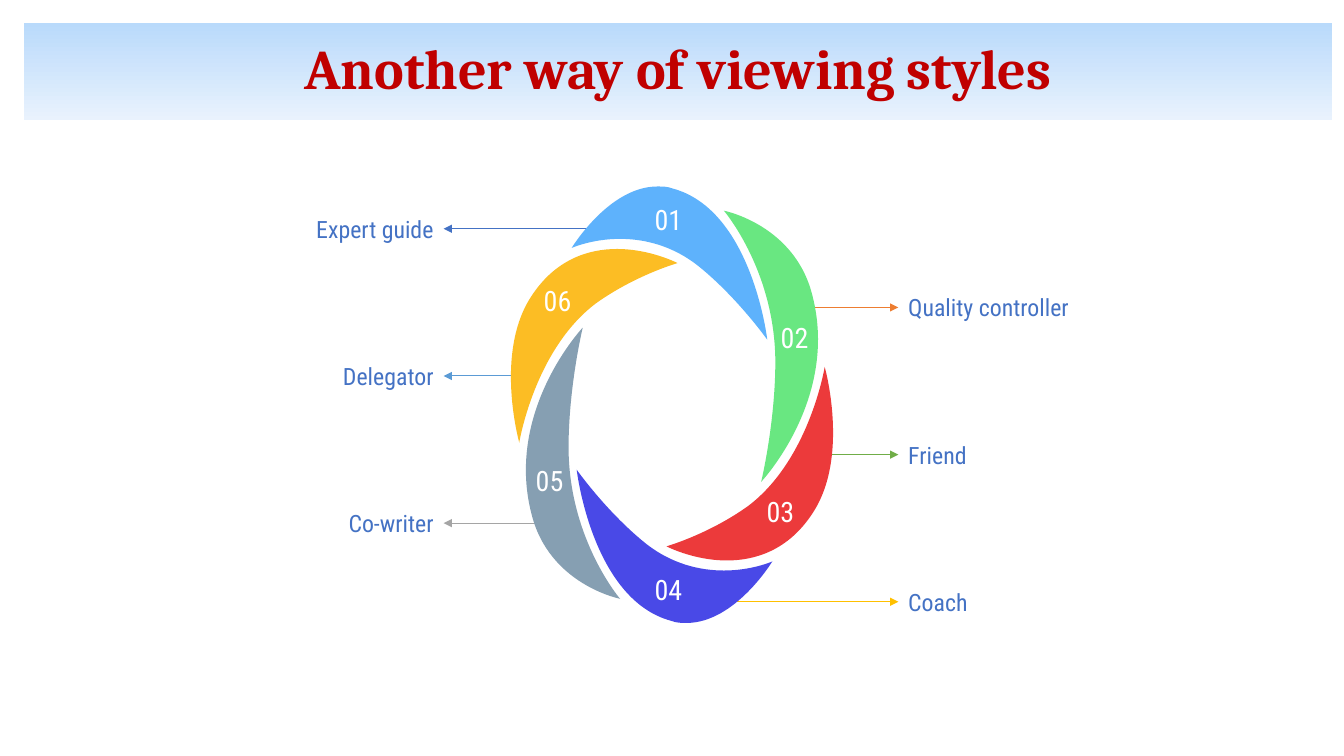
"""Build a slide with six leadership styles arranged as a ring of petals."""
import lxml.etree
import pptx
import pptx.dml.color
import pptx.enum.shapes
import pptx.enum.text
import pptx.oxml.ns
import pptx.util

CELL = pptx.util.Inches(1)
COLUMNS, ROWS = 13.33, 7.5
RING_SPAN = (13.33, 8.03)
LABEL_WIDTH, LABEL_HEIGHT = 1.96, 0.63
LABEL_LEFT = {"left": 2.44, "right": 8.91}
FIRST_ROW = {"left": 2.27, "right": 3.05}
ROW_STEP = 1.46

COLOURS = {
    "title": "C00000", "label": "4472C4", "number": "FFFFFF",
    "band top": "B9DAFB", "band bottom": "E9F2FD",
    "01": "5EB2FC", "02": "69E781", "03": "EC3A3B",
    "04": "4949E7", "05": "869FB2", "06": "FCBD24",
    "Expert guide": "4472C4", "Quality controller": "ED7D31",
    "Friend": "70AD47", "Coach": "FFC000",
    "Delegator": "5B9BD5", "Co-writer": "A5A5A5",
}

TOP_PETAL = [
    (6.52, 1.85), (6.04, 1.85), (5.67, 2.46), (5.67, 2.46),
    (5.67, 2.46), (5.87, 2.37), (6.15, 2.37),
    (6.38, 2.37), (6.67, 2.43), (6.94, 2.65),
    (7.32, 2.96), (7.61, 3.37), (7.61, 3.37),
    (7.61, 3.37), (7.46, 2.08), (6.67, 1.87),
    (6.62, 1.85), (6.57, 1.85), (6.52, 1.85),
]
UPPER_RIGHT_PETAL = [
    (7.18, 2.09), (7.18, 2.09), (7.71, 2.71), (7.69, 3.65),
    (7.68, 4.24), (7.55, 4.78), (7.55, 4.78),
    (7.55, 4.78), (8.32, 3.96), (8.06, 2.94),
    (7.89, 2.23), (7.18, 2.09), (7.18, 2.09),
]
LOWER_RIGHT_PETAL = [
    (8.18, 3.64), (8.18, 3.64), (8.03, 4.56), (7.42, 5.02),
    (7.03, 5.30), (6.61, 5.42), (6.61, 5.42),
    (6.61, 5.42), (6.88, 5.56), (7.21, 5.56),
    (7.49, 5.56), (7.82, 5.46), (8.06, 5.09),
    (8.43, 4.53), (8.18, 3.64), (8.18, 3.64),
]


def opposite(outline):
    """Turn an outline half way round the centre of the ring."""
    return [(RING_SPAN[0] - x, RING_SPAN[1] - y) for x, y in outline]


STYLES = [
    ("Expert guide", "left", 0, 5.85, "01", (6.63, 2.18), TOP_PETAL),
    ("Quality controller", "right", 0, 7.98, "02", (7.88, 3.35), UPPER_RIGHT_PETAL),
    ("Friend", "right", 1, 8.18, "03", (7.74, 5.07), LOWER_RIGHT_PETAL),
    ("Coach", "right", 2, 7.23, "04", (6.63, 5.85), opposite(TOP_PETAL)),
    ("Delegator", "left", 1, 5.13, "06", (5.53, 2.98), opposite(LOWER_RIGHT_PETAL)),
    ("Co-writer", "left", 2, 5.48, "05", (5.45, 4.76), opposite(UPPER_RIGHT_PETAL)),
]


def cells(*counts):
    """Convert counts of columns or rows to slide lengths."""
    return [round(count * CELL) for count in counts]


def rgb(name):
    """Look up a named colour."""
    return pptx.dml.color.RGBColor.from_string(COLOURS[name])


def write(holder, text, *, size, colour, font="Roboto Condensed", align="CENTER",
          bold=False, spacing=None):
    """Write one formatted line, centred vertically, in a shape."""
    frame = holder.text_frame
    frame.word_wrap = True
    frame.vertical_anchor = pptx.enum.text.MSO_ANCHOR.MIDDLE
    frame.margin_left = frame.margin_right = cells(0.1)[0]
    frame.margin_top = frame.margin_bottom = cells(0.1)[0]
    line = frame.paragraphs[0]
    line.alignment = pptx.enum.text.PP_ALIGN[align]
    line.line_spacing = spacing
    words = line.add_run()
    words.text = text
    words.font.name = font
    words.font.size = pptx.util.Pt(size)
    words.font.bold = bold
    words.font.color.rgb = rgb(colour)


def add_text(slide, text, centre, width, height, **text_format):
    """Add a text box around a centre point."""
    left, top = centre[0] - width / 2, centre[1] - height / 2
    box = slide.shapes.add_textbox(*cells(left, top, width, height))
    write(box, text, **text_format)
    return box


def add_title(slide, text):
    """Add the gradient band that carries the title."""
    band = slide.shapes.add_shape(
        pptx.enum.shapes.MSO_SHAPE.RECTANGLE, *cells(0.24, 0.23, 12.97, 0.96))
    band.shadow.inherit = False
    band.line.fill.background()
    band.fill.gradient()
    band.fill.gradient_angle = 270
    for stop, name in zip(band.fill.gradient_stops, ("band top", "band bottom")):
        stop.color.rgb = rgb(name)
    write(band, text, size=40, colour="title", font="Cambria", bold=True, spacing=0.9)


def add_pointer(slide, label, side, column, row, colour):
    """Add a line from a petal whose arrowhead meets the label."""
    end = cells(column, row)
    pointer = slide.shapes.add_connector(
        pptx.enum.shapes.MSO_CONNECTOR.STRAIGHT, *end, *end)
    pointer.begin_connect(label, 3 if side == "left" else 1)
    pointer.end_y = pointer.begin_y
    pointer.line.color.rgb = rgb(colour)
    pointer.line.width = pptx.util.Pt(0.75)
    qn = pptx.oxml.ns.qn
    properties = pointer._element.spPr
    lxml.etree.SubElement(properties.find(qn("a:ln")), qn("a:headEnd"), type="triangle")
    lxml.etree.SubElement(properties, qn("a:effectLst"))


def bend(petal):
    """Turn each three straight segments of a petal into one cubic curve."""
    qn = pptx.oxml.ns.qn
    segments = list(petal._element.iter(qn("a:lnTo")))
    for first in range(0, len(segments), 3):
        curve = lxml.etree.Element(qn("a:cubicBezTo"))
        segments[first].addprevious(curve)
        for segment in segments[first:first + 3]:
            curve.append(segment[0])
            segment.getparent().remove(segment)


def add_petal(slide, outline, colour):
    """Add one filled petal of the ring."""
    builder = slide.shapes.build_freeform(*cells(*outline[0]))
    builder.add_line_segments([cells(*point) for point in outline[1:]], close=True)
    petal = builder.convert_to_shape()
    bend(petal)
    petal.shadow.inherit = False
    petal.fill.solid()
    petal.fill.fore_color.rgb = rgb(colour)
    petal.line.fill.background()


def add_style(slide, name, side, index, pointer_end, number, number_centre, outline):
    """Add a style's label, pointer, petal and number."""
    row = FIRST_ROW[side] + index * ROW_STEP
    label = add_text(
        slide, name, (LABEL_LEFT[side] + LABEL_WIDTH / 2, row), LABEL_WIDTH, LABEL_HEIGHT,
        size=17, colour="label", align="RIGHT" if side == "left" else "LEFT")
    add_pointer(slide, label, side, pointer_end, row, name)
    add_petal(slide, outline, number)
    add_text(slide, number, number_centre, 0.55, 0.58, size=20, colour="number")


def main():
    """Build and save the slide."""
    deck = pptx.Presentation()
    deck.slide_width, deck.slide_height = cells(COLUMNS, ROWS)
    slide = deck.slides.add_slide(deck.slide_layouts[6])
    for style in STYLES:
        add_style(slide, *style)
    add_title(slide, "Another way of viewing styles")
    deck.save("out.pptx")


if __name__ == "__main__":
    main()
